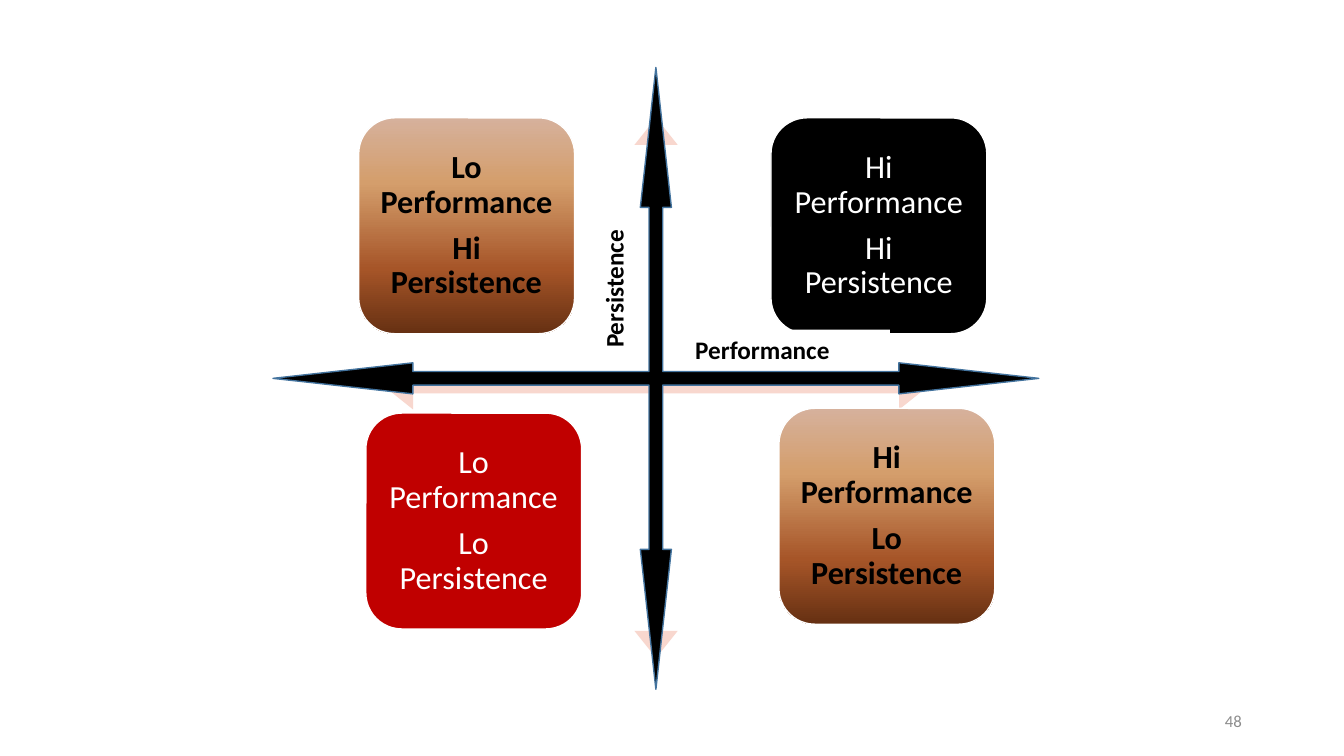
import pptx
import pptx.util
import pptx.dml.color
import pptx.enum.shapes
import pptx.enum.text
import pptx.oxml
import pptx.oxml.ns

Cm = pptx.util.Cm
Pt = pptx.util.Pt
SHAPE = pptx.enum.shapes.MSO_SHAPE
ALIGN = pptx.enum.text.PP_ALIGN
ANCHOR = pptx.enum.text.MSO_ANCHOR

COLORS = {
    "black": "000000", "white": "FFFFFF", "red": "C00000", "pink": "F8D7CE",
    "outline": "43739E", "grey": "8C8C8C",
}
BRONZE = [(0, "D6B19C"), (30, "D49E6C"), (70, "A65528"), (100, "663012")]


def rgb(name):
    return pptx.dml.color.RGBColor.from_string(COLORS[name])


def fill_gradient(sp, stops):
    """Fill a shape with a top-to-bottom gradient."""
    sp.fill.gradient()
    sp.fill.gradient_angle = 270  # counter-clockwise, so downwards
    gs_lst = sp._element.spPr.find(".//" + pptx.oxml.ns.qn("a:gsLst"))
    for gs in list(gs_lst):
        gs_lst.remove(gs)
    for percent, color in stops:
        gs_lst.append(pptx.oxml.parse_xml(
            f'<a:gs {pptx.oxml.ns.nsdecls("a")} pos="{percent * 1000}">'
            f'<a:srgbClr val="{color}"/></a:gs>'))


def add_block(s, kind, left, top, width, height, fill, line=None, adjust=()):
    sp = s.shapes.add_shape(kind, Cm(left), Cm(top), Cm(width), Cm(height))
    sp.shadow.inherit = False
    for i, value in enumerate(adjust):
        sp.adjustments[i] = value
    if fill == "bronze":
        fill_gradient(sp, BRONZE)
    else:
        sp.fill.solid()
        sp.fill.fore_color.rgb = rgb(fill)
    if line:
        sp.line.color.rgb = rgb(line)
        sp.line.width = Pt(1)
    else:
        sp.line.fill.background()
    return sp


def write(sp, text, size, color, bold=False, align=ALIGN.LEFT, anchor=ANCHOR.TOP):
    tf = sp.text_frame
    tf.word_wrap = True
    tf.vertical_anchor = anchor
    tf.text = text
    for p in tf.paragraphs:
        p.alignment = align
        for r in p.runs:
            r.font.name = "Calibri"
            r.font.size = Pt(size)
            r.font.bold = bold
            r.font.color.rgb = rgb(color)
    return tf


def add_tile(s, left, top, performance, persistence, fill):
    sp = add_block(s, SHAPE.ROUNDED_RECTANGLE, left, top, 5.44, 5.44, fill, "white")
    mixed = performance != persistence
    tf = write(sp, f"{performance} Performance\n{persistence} Persistence", 23,
               "black" if mixed else "white", mixed, ALIGN.CENTER, ANCHOR.MIDDLE)
    tf.margin_left = tf.margin_right = tf.margin_top = tf.margin_bottom = Cm(0.25)
    for p in tf.paragraphs:
        p.line_spacing = 0.9
        p.space_after = Pt(8)


def add_matrix(s, left, top, width, height):
    # Pale arrows behind the tiles
    add_block(s, SHAPE.QUAD_ARROW, left + 2.85, top + 1.27, 13.61, 13.61, "pink",
              adjust=(0.02, 0.04, 0.05))

    # Four quadrants
    for dx, dy, performance, persistence, fill in [
        (2.16, 1.27, "Lo", "Hi", "bronze"),
        (12.55, 1.27, "Hi", "Hi", "black"),
        (2.34, 8.71, "Lo", "Lo", "red"),
        (12.75, 8.59, "Hi", "Lo", "bronze"),
    ]:
        add_tile(s, left + dx, top + dy, performance, persistence, fill)

    # Axes
    add_block(s, SHAPE.QUAD_ARROW, left, top, width, height, "black", "outline",
              adjust=(0.022, 0.025, 0.225))

    # Axis labels
    sp = add_block(s, SHAPE.RECTANGLE, left + 10.39, top + 6.61, 5.16, 1.02, "white")
    write(sp, "Performance", 18, "black", True)
    sp = s.shapes.add_textbox(Cm(left + 8.08), Cm(top + 3.18), Cm(1.27), Cm(4.14))
    tf = write(sp, "Persistence", 18, "black", True)
    tf._txBody.bodyPr.set("vert", "vert270")


def add_slide_number(s, left, top, width, height):
    sp = s.shapes.add_textbox(Cm(left), Cm(top), Cm(width), Cm(height))
    write(sp, "48", 12, "grey", align=ALIGN.RIGHT, anchor=ANCHOR.MIDDLE)


def main():
    prs = pptx.Presentation()
    prs.slide_width, prs.slide_height = Cm(33.87), Cm(19.05)
    s = prs.slides.add_slide(prs.slide_layouts[6])
    add_matrix(s, 6.88, 1.7, 19.3, 15.67)
    add_slide_number(s, 23.93, 17.65, 7.62, 1.02)
    prs.save("out.pptx")


if __name__ == "__main__":
    main()
